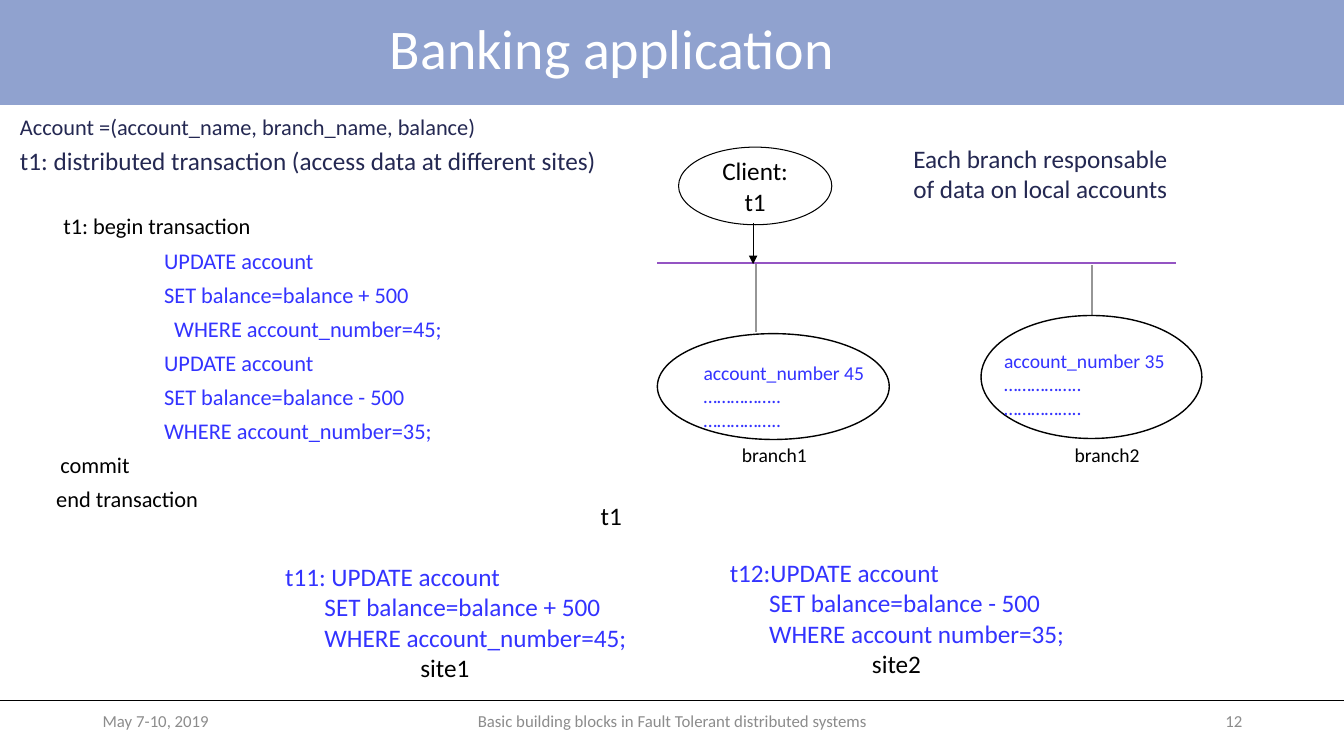
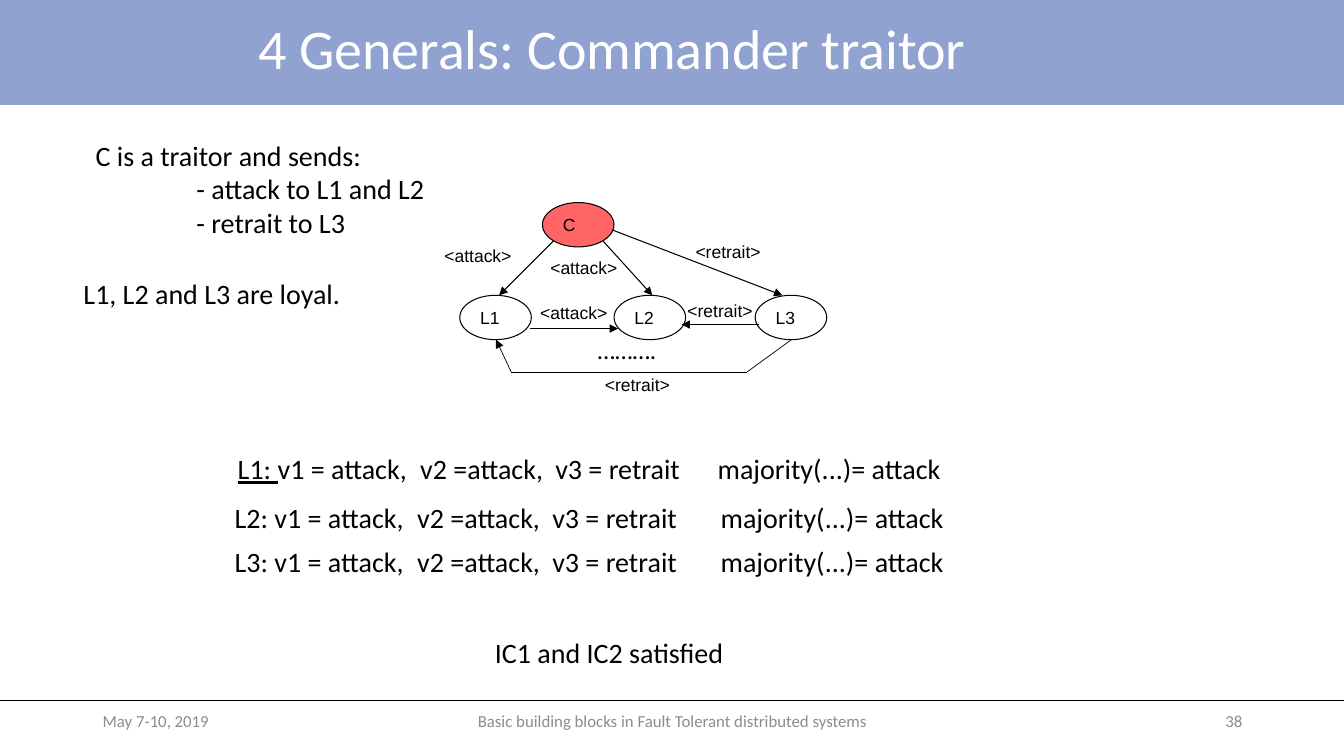
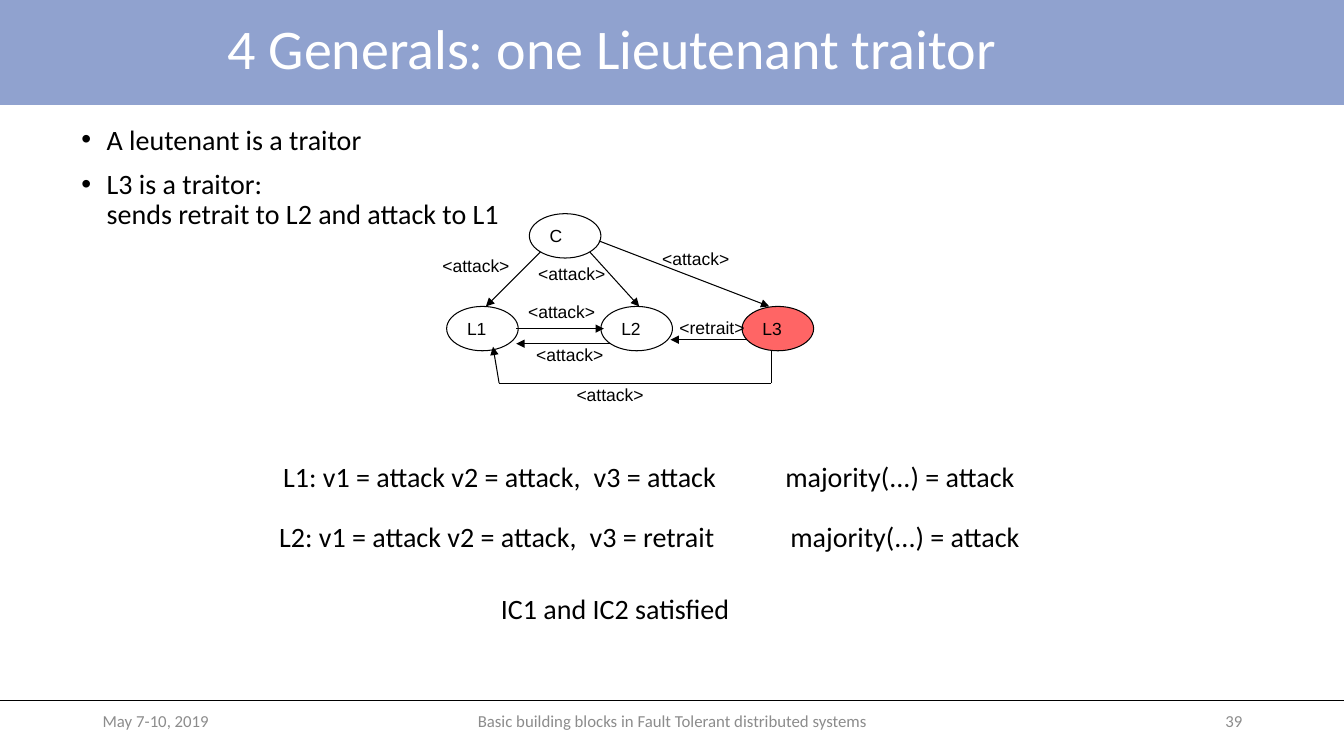
from lxml.etree import SubElement
from pptx import Presentation
from pptx.dml.color import RGBColor
from pptx.enum.shapes import MSO_CONNECTOR, MSO_SHAPE
from pptx.enum.text import MSO_ANCHOR, MSO_AUTO_SIZE, PP_ALIGN
from pptx.oxml.ns import qn
from pptx.util import Pt

PX = 9144  # 100 px to the inch
rgb = RGBColor.from_string
BAND, NAVY, BLUE, GREY = "90A2CF", "242852", "3333FF", "8C8C8C"
BLACK, WHITE, RED, PURPLE, LINK = "000000", "FFFFFF", "FF6565", "9454C3", "969696"
LEFT, CENTER, RIGHT = PP_ALIGN.LEFT, PP_ALIGN.CENTER, PP_ALIGN.RIGHT


def put(slide, box, lines, size=18, color=BLACK, font="Calibri", align=LEFT, wrap=True,
        middle=False, before=0, tabs=(), underlined="", outline=None, fill=None):
    """Text box, or an oval when outline is given; a line is text or (text, color, indent)."""
    place = [n * PX for n in box]
    if outline:
        shape = slide.shapes.add_shape(MSO_SHAPE.OVAL, *place)
        shape.shadow.inherit = False
        shape.line.color.rgb, shape.line.width = rgb(BLACK), Pt(outline)
        if fill:
            shape.fill.solid()
            shape.fill.fore_color.rgb = rgb(fill)
        else:
            shape.fill.background()
    else:
        shape = slide.shapes.add_textbox(*place)
    frame = shape.text_frame
    frame.word_wrap = wrap
    frame.vertical_anchor = MSO_ANCHOR.MIDDLE if middle else MSO_ANCHOR.TOP
    for i, line in enumerate(lines):
        words, ink, indent = line if isinstance(line, tuple) else (line, color, 0)
        para = frame.add_paragraph() if i else frame.paragraphs[0]
        props = para._p.get_or_add_pPr()
        if indent:
            props.set("marL", str(indent * PX))
        if tabs:
            stops = SubElement(props, qn("a:tabLst"))
            for stop in tabs:
                SubElement(stops, qn("a:tab"), pos=str(stop * PX), algn="l")
        para.alignment = align
        if i and before:
            para.space_before = Pt(before)
        for part in filter(None, (underlined, words)):
            run = para.add_run()
            run.text = part
            run.font.name, run.font.size = font, Pt(size)
            run.font.color.rgb = rgb(ink)
            if part == underlined:
                run.font.underline = True


def connect(slide, ends, width=0.75, color=BLACK, arrow=False):
    line = slide.shapes.add_connector(MSO_CONNECTOR.STRAIGHT, *[n * PX for n in ends])
    line.line.color.rgb, line.line.width = rgb(color), Pt(width)
    props = line._element.spPr
    if arrow:
        SubElement(props.find(qn("a:ln")), qn("a:tailEnd"), type="triangle")
    SubElement(props, qn("a:effectLst"))
    return line


deck = Presentation()
deck.slide_width, deck.slide_height = 1333 * PX, 750 * PX
layout = deck.slide_layouts[5]

# Titles and footers
pages = []
for heading, number in (("Banking application", "12"),
                        ("4 Generals: Commander traitor", "38"),
                        ("4 Generals: one Lieutenant traitor", "39")):
    page = deck.slides.add_slide(layout)
    pages.append(page)
    title = page.shapes.title
    title.left, title.top, title.width, title.height = 0, 0, 1214 * PX, 102 * PX
    title.text_frame.auto_size = MSO_AUTO_SIZE.NONE
    title.text_frame.vertical_anchor = MSO_ANCHOR.MIDDLE
    para = title.text_frame.paragraphs[0]
    para.alignment, para.line_spacing = CENTER, 0.9
    run = para.add_run()
    run.text = heading
    run.font.name, run.font.size, run.font.color.rgb = "Calibri", Pt(40), rgb(WHITE)
    for x, width, words, align in (
            (92, 300, "May 7-10, 2019", LEFT),
            (442, 450, "Basic building blocks in Fault Tolerant distributed systems", CENTER),
            (942, 300, number, RIGHT)):
        put(page, (x, 695, width, 40), [words], 12, GREY, align=align, middle=True)
banking, commander, lieutenant = pages

# Band and footer rule, moved to the shared layout
band = banking.shapes.add_shape(MSO_SHAPE.RECTANGLE, 0, 0, 1333 * PX, 104 * PX)
band.shadow.inherit = False
band.fill.solid()
band.fill.fore_color.rgb = rgb(BAND)
band.line.fill.background()
rule = connect(banking, (0, 695, 1333, 695), 0.5)
for part in (band, rule):
    layout.shapes._spTree.append(part._element)

# Banking: statements
put(banking, (10, 107, 477, 40), ["Account =(account_name, branch_name, balance)"], 16, NAVY,
    wrap=False)
put(banking, (10, 139, 604, 40),
    ["t1: distributed transaction (access data at different sites)"], 18, NAVY)
put(banking, (896, 137, 287, 71),
    ["Each branch responsable", "of data on local accounts"], 18, NAVY)
put(banking, (15, 206, 600, 320), [
    ("t1: begin transaction", BLACK, 38),
    ("UPDATE account", BLUE, 138),
    ("SET balance=balance + 500", BLUE, 138),
    ("WHERE account_number=45;", BLUE, 148),
    ("UPDATE account", BLUE, 138),
    ("SET balance=balance - 500", BLUE, 138),
    ("WHERE account_number=35;", BLUE, 138),
    ("commit", BLACK, 35),
    ("end transaction", BLACK, 31)], 16, before=5.2)

# Banking: the two subtransactions
put(banking, (586, 491, 42, 40), ["t1"], wrap=False)
for x, y, update, change, where, site, site_indent in (
        (273, 552, "t11: UPDATE account", "+ 500", "account_number=45;", "site1", 134),
        (714, 548, "t12:UPDATE account", "- 500", "account number=35;", "site2", 141)):
    put(banking, (x, y, 417, 131), [
        (update, BLUE, 0), ("SET balance=balance " + change, BLUE, 39),
        ("WHERE " + where, BLUE, 39), (site, BLACK, site_indent)])

# Banking: client, network and branches
connect(banking, (652, 261, 1166, 261), 1, PURPLE)
put(banking, (673, 146, 152, 77), ["Client:", "t1"], align=CENTER, wrap=False,
    middle=True, outline=0.75, fill=WHITE)
connect(banking, (747, 221, 747, 262), arrow=True)
for link, oval, name, name_x, account, account_at in (
        ((750, 262, 750, 329), (652, 331, 230, 105), "branch1", 726, "45", (688, 353)),
        ((1083, 263, 1083, 313), (973, 313, 219, 122), "branch2", 1056, "35", (986, 341))):
    connect(banking, link, 1.25, LINK)
    put(banking, oval, [], outline=1)
    put(banking, (name_x, 434, 110, 33), [name], 14)
    put(banking, (*account_at, 200, 81),
        ["account_number " + account, "……………..", "…………….."], 14, BLUE)

# Generals: diagrams, the second one shifted from the first
generals = {"C": (538, 201), "L1": (456, 293), "L2": (609, 293), "L3": (749, 293)}
orders = ((549, 239, 495, 293), (598, 239, 647, 293), (607, 228, 776, 293))
for page, traitor, dx, dy, arrows, path, path_width, messages in (
        (commander, "C", 0, 0,
         [(526, 326, 613, 326, 0.75), (753, 322, 676, 322, 0.75)],
         [(785, 337), (741, 369), (507, 369), (492, 337)], 0.5,
         [(431, 238, "<attack>"), (680, 234, "<retrait>"), (526, 295, "<attack>"),
          (536, 250, "<attack>"), (672, 293, "<retrait>"), (590, 366, "<retrait>")]),
        (lieutenant, "L3", -13, 11,
         [(512, 326, 599, 326, 0.75), (741, 337, 665, 337, 0.75), (606, 341, 512, 341, 0.5)],
         [(765, 348), (765, 380), (495, 380), (489, 344)], 0.75,
         [(429, 248, "<attack>"), (647, 241, "<attack>"), (514, 294, "<attack>"),
          (524, 256, "<attack>"), (664, 310, "<retrait>"), (522, 336, "<attack>"),
          (562, 376, "<attack>")])):
    for name, (x, y) in generals.items():
        put(page, (x + dx, y + dy, 71, 44), [name], 12.5, font="Arial", wrap=False,
            middle=True, outline=0.75, fill=RED if name == traitor else WHITE)
    for x1, y1, x2, y2 in orders:
        connect(page, (x1 + dx, y1 + dy, x2 + dx, y2 + dy), arrow=True)
    for *ends, width in arrows:
        connect(page, ends, width, arrow=True)
    for start, end in zip(path, path[1:]):
        connect(page, (*start, *end), path_width, arrow=end == path[-1])
    for x, y, message in messages:
        put(page, (x, y, 87 if message == "<attack>" else 85, 31), [message], 12.5,
            font="Arial", wrap=False)

# Commander traitor: texts
put(commander, (85, 132, 604, 111), [
    "C is a traitor and sends:", ("- attack to L1 and L2", BLACK, 100),
    ("- retrait to L3", BLACK, 100)], 20)
put(commander, (73, 269, 277, 44), ["L1, L2 and L3 are loyal."], 20, wrap=False)
put(commander, (583, 327, 79, 40), ["………."], wrap=False)
put(commander, (481, 626, 302, 44), ["IC1 and IC2 satisfied"], 20)
votes = "v1 = attack,\tv2 =attack,\tv3 = retrait\tmajority(...)= attack"
for x, y, mark, words, majority_x in ((226, 443, "L1: ", votes, 476),
                                      (223, 492, "", "L2: " + votes, 482),
                                      (223, 535, "", "L3: " + votes, 482)):
    put(commander, (x, y, 880, 44), [words], 20, tabs=(181, 315, majority_x), underlined=mark)

# Lieutenant traitor: bullets
bullets = lieutenant.shapes.add_textbox(71 * PX, 120 * PX, 900 * PX, 120 * PX).text_frame
bullets.word_wrap = True
for i, point in enumerate((["A leutenant is a traitor"],
                           ["L3 is a traitor:", "sends retrait to L2 and attack to L1"])):
    para = bullets.add_paragraph() if i else bullets.paragraphs[0]
    props = para._p.get_or_add_pPr()
    props.set("marL", str(25 * PX))
    props.set("indent", str(-25 * PX))
    SubElement(props, qn("a:buFont"), typeface="Arial")
    SubElement(props, qn("a:buChar"), char="•")
    para.line_spacing = 0.9
    para.space_before = Pt(10 * i)
    for j, words in enumerate(point):
        if j:
            para.add_line_break()
        run = para.add_run()
        run.text = words
        run.font.name, run.font.size, run.font.color.rgb = "Calibri", Pt(20), rgb(BLACK)

# Lieutenant traitor: votes
for x, y, name, third, majority_x in ((271, 451, "L1", "attack", 498),
                                      (267, 510, "L2", "retrait", 507)):
    put(lieutenant, (x, y, 881, 44),
        [f"{name}: v1 = attack v2 = attack,\tv3 = {third}\tmajority(...) = attack"], 20,
        tabs=(308, majority_x))
put(lieutenant, (487, 582, 249, 44), ["IC1 and IC2 satisfied"], 20, wrap=False)

deck.save("out.pptx")
